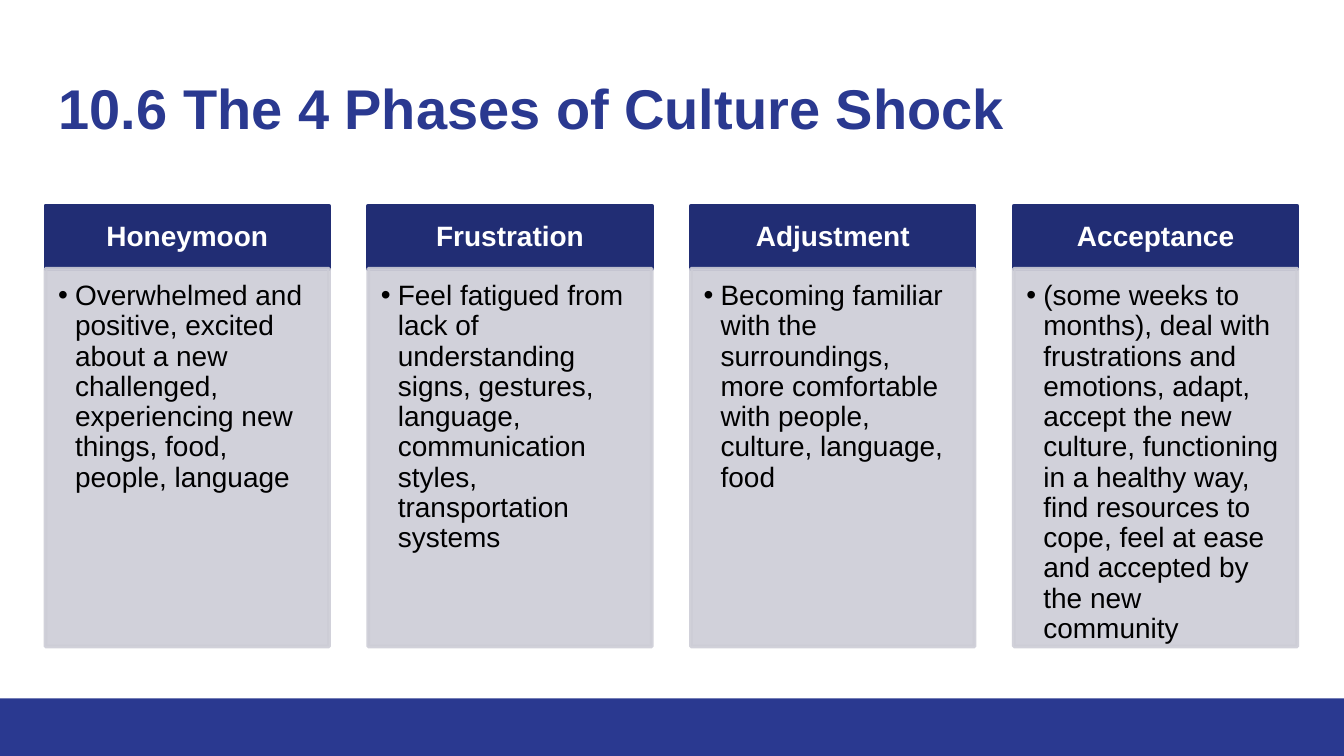
from pptx import Presentation
from pptx.dml.color import RGBColor
from pptx.enum.shapes import MSO_SHAPE as Shape
from pptx.enum.text import MSO_ANCHOR as Anchor, PP_ALIGN as Align
from pptx.oxml.ns import qn
from pptx.util import Cm, Pt
from lxml.etree import SubElement as Sub

PHASES = {
    "Honeymoon": "Overwhelmed and positive, excited about a new challenged, "
                 "experiencing new things, food, people, language",
    "Frustration": "Feel fatigued from lack of understanding signs, gestures, "
                   "language, communication styles, transportation systems",
    "Adjustment": "Becoming familiar with the surroundings, more comfortable "
                  "with people, culture, language, food",
    "Acceptance": "(some weeks to months), deal with frustrations and emotions, "
                  "adapt, accept the new culture, functioning in a healthy way, "
                  "find resources to cope, feel at ease and accepted by the new "
                  "community",
}


def color(text):
    return RGBColor.from_string(text)


class Deck:
    """Style and current slide, with a method for each kind of element."""

    font = "Arial"
    blue, navy, grey = "2A3990", "212D74", "CDCDD6"
    white, black = "FFFFFF", "000000"

    def __init__(self, slide):
        self.slide = slide

    def label(self, shape, text, size, ink, pads, bold=False, anchor=Anchor.TOP):
        frame = shape.text_frame
        frame.word_wrap = True
        frame.vertical_anchor = anchor
        (frame.margin_left, frame.margin_top,
         frame.margin_right, frame.margin_bottom) = [Cm(pad) for pad in pads]
        frame.text = text
        para = frame.paragraphs[0]
        para.alignment = Align.LEFT
        font = para.runs[0].font
        font.name, font.size, font.bold = self.font, Pt(size), bold
        font.color.rgb = color(ink)
        return para

    def rect(self, box, fill, line=True, alpha=100):
        shape = self.slide.shapes.add_shape(
            Shape.RECTANGLE, *[Cm(part) for part in box])
        shape.shadow.inherit = False
        shape.fill.solid()
        shape.fill.fore_color.rgb = color(fill)
        if line:
            shape.line.color.rgb = color(fill)
            shape.line.width = Pt(2)
        else:
            shape.line.fill.background()
        if alpha < 100:
            for node in shape._element.spPr.iter(qn("a:srgbClr")):
                Sub(node, qn("a:alpha"), val=str(alpha * 1000))
        return shape

    def title(self, box, text):
        shape = self.slide.shapes.add_textbox(*[Cm(part) for part in box])
        self.label(shape, text, 30, self.blue, [0.25] * 4, bold=True)

    def header(self, box, text):
        para = self.label(self.rect(box, self.navy), text, 15, self.white,
                          (0.3, 0.17, 0.3, 0.17), True, Anchor.MIDDLE)
        para.alignment = Align.CENTER
        para.line_spacing = 0.9

    def body(self, box, text):
        para = self.label(self.rect(box, self.grey, alpha=90), text, 15,
                          self.black, (0.24, 0.24, 0.3, 0.32))
        para.line_spacing = 0.9
        props = para._p.get_or_add_pPr()
        props.set("marL", str(Cm(0.32)))
        props.set("indent", str(Cm(-0.32)))
        tint = Sub(props, qn("a:buClr"))
        Sub(tint, qn("a:srgbClr"), val=self.black)
        Sub(props, qn("a:buFont"), typeface=self.font)
        Sub(props, qn("a:buChar"), char="•")


def main():
    prs = Presentation()
    prs.slide_width, prs.slide_height = Cm(25.4), Cm(14.29)
    deck = Deck(prs.slides.add_slide(prs.slide_layouts[6]))
    deck.rect((0, 13.2, 25.4, 1.09), deck.blue, line=False)
    deck.title((0.86, 1.14, 23.67, 1.68), "10.6 The 4 Phases of Culture Shock")
    left, step, width = 0.86, 6.1, 5.36
    for col, (phase, text) in enumerate(PHASES.items()):
        x = left + col * step
        deck.header((x, 3.89, width, 1.19), phase)
        deck.body((x, 5.08, width, 7.14), text)
    prs.save("out.pptx")


if __name__ == "__main__":
    main()
